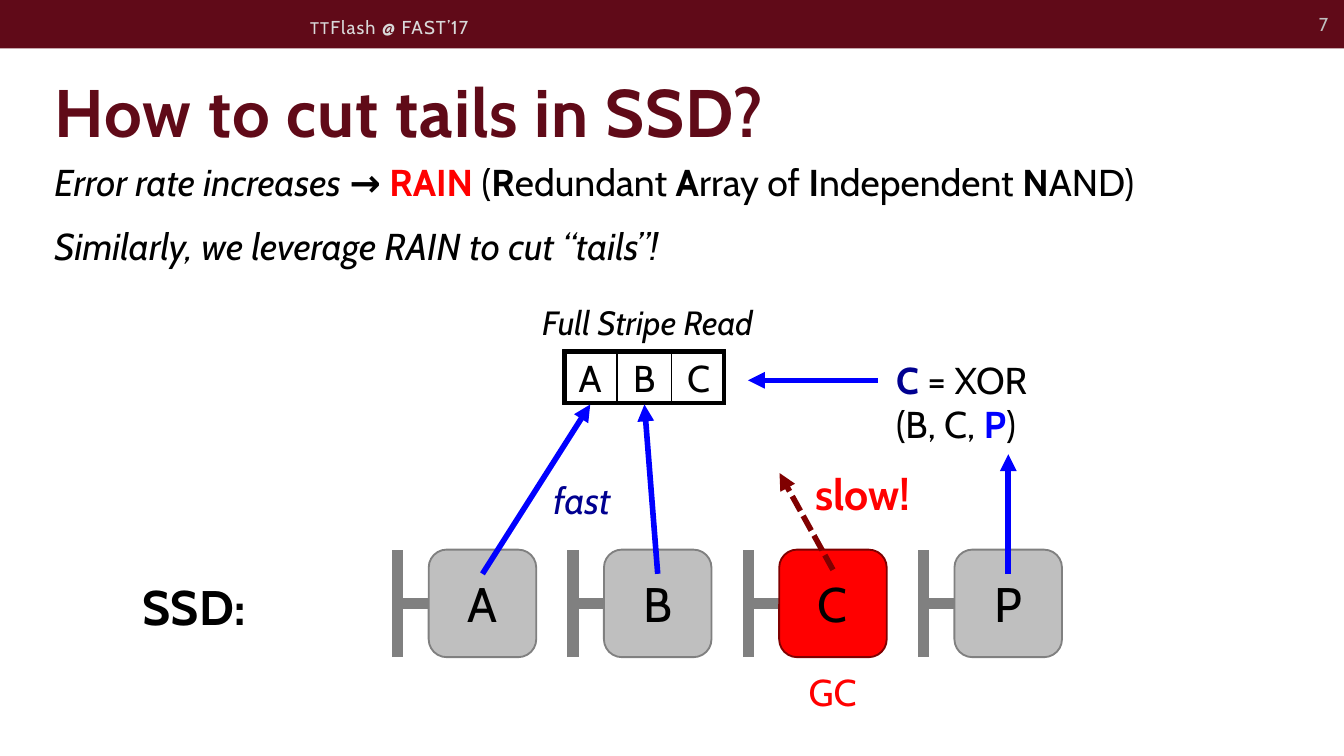
from dataclasses import dataclass
from typing import NamedTuple

from lxml import etree
from pptx import Presentation
from pptx.dml.color import RGBColor
from pptx.enum.dml import MSO_LINE
from pptx.enum.shapes import MSO_CONNECTOR, MSO_SHAPE
from pptx.enum.text import MSO_ANCHOR, MSO_AUTO_SIZE, PP_ALIGN
from pptx.oxml.ns import qn
from pptx.util import Inches, Pt

RECTANGLE, ROUNDED, FRAME = MSO_SHAPE.RECTANGLE, MSO_SHAPE.ROUNDED_RECTANGLE, MSO_SHAPE.FRAME
STRAIGHT, DASH = MSO_CONNECTOR.STRAIGHT, MSO_LINE.SQUARE_DOT
TOP, MIDDLE, BOTTOM = MSO_ANCHOR.TOP, MSO_ANCHOR.MIDDLE, MSO_ANCHOR.BOTTOM
LEFT, CENTER, RIGHT = PP_ALIGN.LEFT, PP_ALIGN.CENTER, PP_ALIGN.RIGHT
LEFT_SIDE, BOTTOM_SIDE = 1, 2

FONT = "Cabin"
COLORS = {
    "maroon": "600A18", "black": "000000", "white": "FFFFFF", "red": "FF0000",
    "dark red": "800000", "blue": "0000FF", "navy": "000090", "gray": "808080",
    "silver": "BFBFBF", "pale": "D9D9D9",
}

# A 16:9 page on a grid of square cells, 100 columns wide
WIDTH = Inches(10)
HEIGHT = WIDTH * 9 // 16
CELL = WIDTH / 100


class Area(NamedTuple):
    column: float
    row: float
    columns: float
    rows: float


class Span(NamedTuple):
    text: str
    size: float = 20
    color: str = "black"
    bold: bool = False
    italic: bool = False
    spacing: float = 0


@dataclass
class Label:
    area: Area
    lines: list[list[Span]]
    align: PP_ALIGN = LEFT
    anchor: MSO_ANCHOR = TOP
    wrap: bool = True


@dataclass
class Chip:
    name: str
    fill: str = "silver"
    edge: str = "gray"


def grid(*cells: float) -> list[int]:
    return [round(cell * CELL) for cell in cells]


def rgb(name: str) -> RGBColor:
    return RGBColor.from_string(COLORS[name])


def write(box, lines: list[list[Span]], align=LEFT, anchor=TOP, wrap=True, after=0) -> None:
    frame = box.text_frame
    frame.auto_size = MSO_AUTO_SIZE.NONE
    frame.word_wrap = wrap
    frame.vertical_anchor = anchor
    for index, spans in enumerate(lines):
        para = frame.add_paragraph() if index else frame.paragraphs[0]
        para.alignment = align
        para.space_before, para.space_after = Pt(0), Pt(after)
        for span in spans:
            run = para.add_run()
            run.text = span.text
            font = run.font
            font.name, font.size = FONT, Pt(span.size)
            font.bold, font.italic = span.bold, span.italic
            font.color.rgb = rgb(span.color)
            if span.spacing:
                run._r.get_or_add_rPr().set("spc", str(round(span.spacing * 100)))


def place(box, area: Area) -> None:
    box.left, box.top, box.width, box.height = grid(*area)


def draw_label(page, label: Label) -> None:
    box = page.shapes.add_textbox(*grid(*label.area))
    write(box, label.lines, label.align, label.anchor, label.wrap)


def draw_shape(page, kind, area: Area, fill: str, edge: str = "", weight: float = 1):
    shape = page.shapes.add_shape(kind, *grid(*area))
    shape.shadow.inherit = False
    shape.fill.solid()
    shape.fill.fore_color.rgb = rgb(fill)
    if edge:
        shape.line.color.rgb = rgb(edge)
        shape.line.width = Pt(weight)
    else:
        shape.line.fill.background()
    return shape


def draw_line(page, start: tuple, end: tuple, color: str, weight: float = 3,
              arrow: bool = True, dashed: bool = False):
    line = page.shapes.add_connector(STRAIGHT, *grid(*start, *end))
    line.line.color.rgb = rgb(color)
    line.line.width = Pt(weight)
    if dashed:
        line.line.dash_style = DASH
    properties = line.element.spPr
    if arrow:
        etree.SubElement(properties.find(qn("a:ln")), qn("a:tailEnd"), type="triangle")
    etree.SubElement(properties, qn("a:effectLst"))
    return line


def draw_chip(page, chip: Chip, column: float) -> None:
    """A chip on its channel: a vertical bus, a stem and the chip itself."""
    bus, middle = column - 2.3, CHIP_ROW + CHIP_SIZE / 2
    stem = draw_line(page, (bus, middle), (column, middle), "gray", 6, arrow=False)
    draw_line(page, (bus, CHIP_ROW + CHIP_SIZE), (bus, CHIP_ROW), "gray", 6, arrow=False)
    area = Area(column, CHIP_ROW, CHIP_SIZE, CHIP_SIZE)
    body = draw_shape(page, ROUNDED, area, chip.fill, chip.edge)
    write(body, [[Span(chip.name, 26)]], CENTER, MIDDLE)
    stem.end_connect(body, LEFT_SIDE)


CHIPS = [Chip("A"), Chip("B"), Chip("C", "red", "dark red"), Chip("P")]
CHIP_COLUMN, CHIP_ROW, CHIP_SIZE, CHIP_PITCH = 31.9, 40.9, 8, 13.04
STRIPE = Area(41.9, 26.05, 12.1, 4.05)

LABELS = [
    Label(Area(22.1, 0.55, 35.6, 2.9),
          [[Span("TT", 9, "pale", spacing=0.6), Span("Flash @ FAST’17", 10, "pale", spacing=0.6)]],
          anchor=MIDDLE),
    Label(Area(91, -0.05, 8.8, 3.7), [[Span("7", 10, "silver")]], RIGHT, MIDDLE),
    Label(Area(7.1, 39.25, 14.7, 11.7), [[Span("SSD:", 26, bold=True)]], CENTER, MIDDLE),
    Label(Area(39.35, 22, 19.1, 4), [[Span("Full Stripe Read", 18, italic=True)]]),
    Label(Area(65.7, 26.05, 15, 7.7),
          [[Span("C ", color="navy", bold=True), Span("= XOR")],
           [Span("(B, C, "), Span("P", color="blue", bold=True), Span(")")]]),
    Label(Area(59.7, 34.3, 12.1, 4.9), [[Span("slow!", 23, "red", bold=True)]]),
    Label(Area(40.2, 35, 6.3, 4.4), [[Span("fast", color="navy", italic=True)]], wrap=False),
    Label(Area(57.35, 49.3, 9.2, 4.4), [[Span("GC", color="red")]], CENTER),
]

# "Redundant Array of Independent NAND" with bold initials
INITIALS = [("R", "edundant "), ("A", "rray of "), ("I", "ndependent "), ("N", "AND)")]
POINTS = [
    [Span("Error rate increases ", italic=True), Span("→ ", bold=True),
     Span("RAIN ", color="red", bold=True), Span("("),
     *(span for first, rest in INITIALS for span in (Span(first, bold=True), Span(rest)))],
    [Span("Similarly, we leverage RAIN to cut “tails”!", italic=True)],
]


def main() -> None:
    deck = Presentation()
    deck.slide_width, deck.slide_height = WIDTH, HEIGHT
    page = deck.slides.add_slide(deck.slide_layouts[1])

    # Header band, title and points
    draw_shape(page, RECTANGLE, Area(0, 0, 100, 3.6), "maroon")
    title, body = page.placeholders
    place(title, Area(3.05, 2.3, 94.3, 9.4))
    write(title, [[Span("How to cut tails in SSD?", 36, "maroon", True, spacing=0.5)]],
          anchor=BOTTOM)
    place(body, Area(3.05, 11.35, 95.6, 9.1))
    write(body, POINTS, after=10)
    for para in body.text_frame.paragraphs:
        properties = para._p.get_or_add_pPr()
        properties.set("marL", "0")
        properties.set("indent", "0")
        etree.SubElement(properties, qn("a:buNone"))

    # Stripe of three cells inside a thick frame
    width = STRIPE.columns / 3
    cells = []
    for index, name in enumerate("ABC"):
        area = Area(STRIPE.column + index * width, STRIPE.row, width, STRIPE.rows)
        cell = draw_shape(page, RECTANGLE, area, "white", "black", 0.85)
        write(cell, [[Span(name)]], CENTER, MIDDLE)
        cells.append(cell)
    border = draw_shape(page, FRAME, STRIPE, "black", "black", 0.75)
    border.adjustments[0] = 0.05

    # Chips and labels
    for index, chip in enumerate(CHIPS):
        draw_chip(page, chip, CHIP_COLUMN + index * CHIP_PITCH)
    for label in LABELS:
        draw_label(page, label)

    # Reads: two fast ones, the parity route and the slow one
    centers = [CHIP_COLUMN + CHIP_SIZE / 2 + index * CHIP_PITCH for index in range(len(CHIPS))]
    for center, cell in zip(centers, cells[:2]):
        read = draw_line(page, (center, 42.7), (center, 30.1), "blue")
        read.end_connect(cell, BOTTOM_SIDE)
    draw_line(page, (centers[3], 42.7), (centers[3], 33.8), "blue")
    draw_line(page, (65.3, 28.3), (55.65, 28.3), "blue")
    draw_line(page, (centers[2], 42.4), (58, 35.2), "dark red", dashed=True)

    deck.save("out.pptx")


if __name__ == "__main__":
    main()
